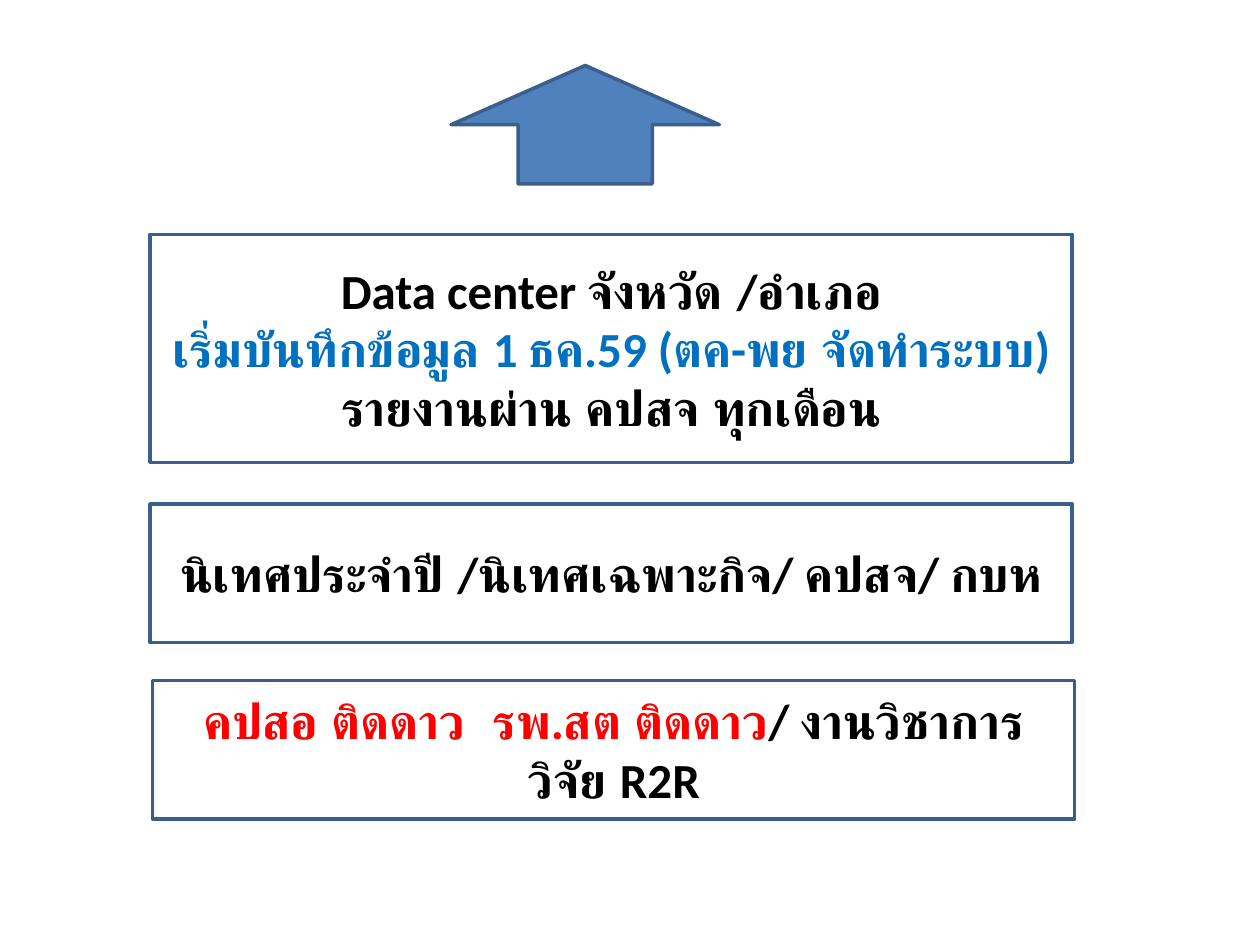
from pptx import Presentation
from pptx.dml.color import RGBColor
from pptx.enum.shapes import MSO_SHAPE
from pptx.enum.text import MSO_ANCHOR, PP_ALIGN
from pptx.util import Inches, Pt

RECTANGLE, UP_ARROW = MSO_SHAPE.RECTANGLE, MSO_SHAPE.UP_ARROW
MIDDLE, CENTER = MSO_ANCHOR.MIDDLE, PP_ALIGN.CENTER

BLACK = RGBColor(0x00, 0x00, 0x00)
BLUE = RGBColor(0x00, 0x70, 0xC0)
RED = RGBColor(0xFF, 0x00, 0x00)
ARROW_BLUE = RGBColor(0x4F, 0x81, 0xBD)
OUTLINE = RGBColor(0x3A, 0x5F, 0x8C)

# Content: each box is (left, top, height, paragraphs of (text, colour) spans)
BOXES = [
    (1.19, 1.86, 1.81, [
        [("Data center จังหวัด /อำเภอ", BLACK)],
        [("เริ่มบันทึกข้อมูล 1 ธค.59 (ตค-พย จัดทำระบบ)", BLUE)],
        [("รายงานผ่าน คปสจ ทุกเดือน", BLACK)],
    ]),
    (1.19, 4.0, 1.1, [
        [("นิเทศประจำปี /นิเทศเฉพาะกิจ/ คปสจ/ กบห", BLACK)],
    ]),
    (1.21, 5.4, 1.1, [
        [("คปสอ ติดดาว  รพ.สต ติดดาว", RED), ("/ งานวิชาการ วิจัย R2R", BLACK)],
    ]),
]
BOX_WIDTH = 7.32
ARROW = (3.58, 0.52, 2.13, 0.94)
FONT_FORMAT = {"name": "Calibri", "size": Pt(28), "bold": True}


def add_outlined(page, kind, left, top, width, height):
    shape = page.shapes.add_shape(kind, *map(Inches, (left, top, width, height)))
    shape.shadow.inherit = False
    shape.line.color.rgb = OUTLINE
    shape.line.width = Pt(2)
    return shape


def write_paragraphs(frame, paragraphs):
    frame.word_wrap = True
    frame.vertical_anchor = MIDDLE
    for index, spans in enumerate(paragraphs):
        para = frame.add_paragraph() if index else frame.paragraphs[0]
        para.alignment = CENTER
        for text, colour in spans:
            span = para.add_run()
            span.text = text
            for name, value in FONT_FORMAT.items():
                setattr(span.font, name, value)
            span.font.color.rgb = colour


def main():
    deck = Presentation()
    deck.slide_width, deck.slide_height = Inches(10), Inches(7.5)
    page = deck.slides.add_slide(deck.slide_layouts[6])

    # Stacked text boxes
    for left, top, height, paragraphs in BOXES:
        box = add_outlined(page, RECTANGLE, left, top, BOX_WIDTH, height)
        box.fill.background()
        write_paragraphs(box.text_frame, paragraphs)

    # Arrow rising from the stack
    arrow = add_outlined(page, UP_ARROW, *ARROW)
    arrow.fill.solid()
    arrow.fill.fore_color.rgb = ARROW_BLUE

    deck.save("out.pptx")


if __name__ == "__main__":
    main()
